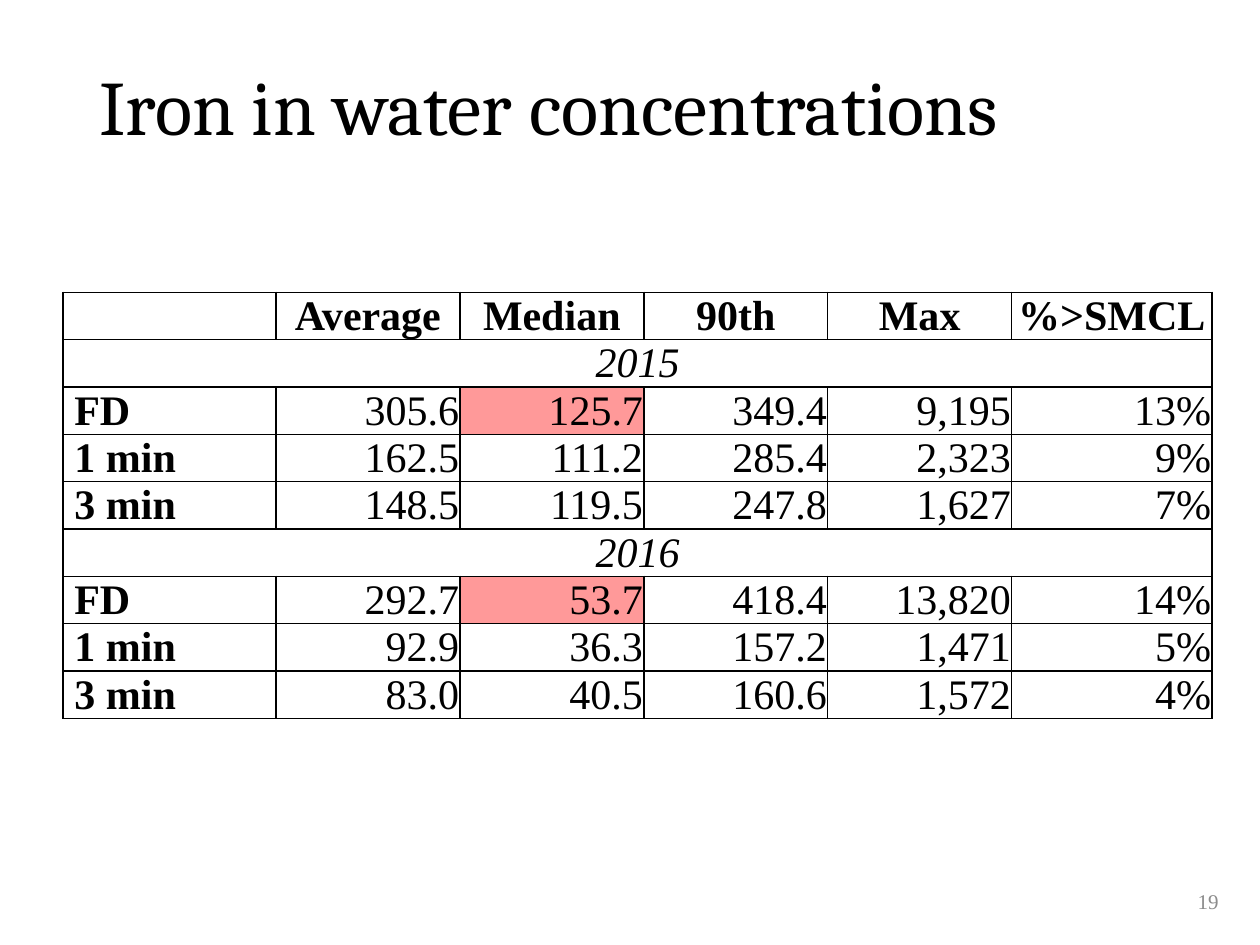
from dataclasses import dataclass

from lxml import etree
from pptx import Presentation
from pptx.dml.color import RGBColor
from pptx.enum.text import MSO_ANCHOR, PP_ALIGN
from pptx.oxml.ns import qn
from pptx.util import Inches, Pt

LEFT, CENTER, RIGHT = PP_ALIGN.LEFT, PP_ALIGN.CENTER, PP_ALIGN.RIGHT
MIDDLE, BOTTOM = MSO_ANCHOR.MIDDLE, MSO_ANCHOR.BOTTOM


@dataclass(frozen=True)
class Theme:
    ink: str = "000000"
    muted: str = "8C8C8C"
    highlight: str = "FF0000"
    highlight_alpha: int = 40
    title_font: str = "Cambria"
    body_font: str = "Times New Roman"
    title_size: int = 44
    table_size: int = 24
    table_line: int = 26
    number_size: int = 12
    border: int = 1


THEME = Theme()

HEADINGS = ["", "Average", "Median", "90th", "Max", "%>SMCL"]
YEARS = {
    "2015": [
        ["FD", "305.6", "125.7", "349.4", "9,195", "13%"],
        ["1 min", "162.5", "111.2", "285.4", "2,323", "9%"],
        ["3 min", "148.5", "119.5", "247.8", "1,627", "7%"],
    ],
    "2016": [
        ["FD", "292.7", "53.7", "418.4", "13,820", "14%"],
        ["1 min", "92.9", "36.3", "157.2", "1,471", "5%"],
        ["3 min", "83.0", "40.5", "160.6", "1,572", "4%"],
    ],
}
COLUMN_WIDTHS = [1.69] + [1.46] * 4 + [1.59]
ROW_HEIGHT = Pt(27.07)
CELL_MARGIN = Pt(0.5)
LABEL_INDENT = Pt(6.5)
MEDIAN = HEADINGS.index("Median")


def write_text(frame, text, *, size, font=THEME.body_font, color=THEME.ink,
               align=LEFT, bold=False, italic=False, line_spacing=None):
    para = frame.paragraphs[0]
    para.alignment = align
    para.line_spacing = line_spacing
    if text:
        span = para.add_run()
        span.text = text
        span.font.name = font
        span.font.size = Pt(size)
        span.font.bold = bold
        span.font.italic = italic
        span.font.color.rgb = RGBColor.from_string(color)


def add_text_box(page, box, text, **text_format):
    frame = page.shapes.add_textbox(*map(Inches, box)).text_frame
    frame.word_wrap = True
    frame.vertical_anchor = MIDDLE
    write_text(frame, text, **text_format)


def add_title(page, box):
    add_text_box(page, box, "Iron in water concentrations", size=THEME.title_size,
                 font=THEME.title_font, line_spacing=0.9)


def add_page_number(page, box):
    add_text_box(page, box, "19", size=THEME.number_size, color=THEME.muted, align=RIGHT)


def set_borders(cell):
    properties = cell._tc.get_or_add_tcPr()
    for side in ("a:lnL", "a:lnR", "a:lnT", "a:lnB"):
        line = etree.SubElement(properties, qn(side), w=str(Pt(THEME.border)))
        fill = etree.SubElement(line, qn("a:solidFill"))
        etree.SubElement(fill, qn("a:srgbClr"), val=THEME.ink)


def set_fill(cell, highlighted):
    if not highlighted:
        cell.fill.background()
        return
    cell.fill.solid()
    cell.fill.fore_color.rgb = RGBColor.from_string(THEME.highlight)
    color = cell._tc.tcPr.find(f"{qn('a:solidFill')}/{qn('a:srgbClr')}")
    etree.SubElement(color, qn("a:alpha"), val=str(THEME.highlight_alpha * 1000))


def format_cell(cell, text="", *, anchor=BOTTOM, indent=CELL_MARGIN, highlighted=False,
                **text_format):
    cell.margin_left = indent
    cell.margin_right = cell.margin_top = CELL_MARGIN
    cell.margin_bottom = 0
    cell.vertical_anchor = anchor
    set_borders(cell)
    set_fill(cell, highlighted)
    write_text(cell.text_frame, text, size=THEME.table_size,
               line_spacing=Pt(THEME.table_line), **text_format)


def add_year_row(cells, year):
    cells[0].merge(cells[-1])
    for cell, text in zip(cells, [year] + [""] * (len(cells) - 1)):
        format_cell(cell, text, align=CENTER, italic=True)


def add_sample_row(cells, values):
    format_cell(cells[0], values[0], bold=True, indent=LABEL_INDENT)
    for column in range(1, len(values)):
        format_cell(cells[column], values[column], align=RIGHT,
                    highlighted=values[0] == "FD" and column == MEDIAN)


def add_iron_table(page, left, top):
    row_count = 1 + sum(1 + len(samples) for samples in YEARS.values())
    table = page.shapes.add_table(
        row_count, len(HEADINGS), Inches(left), Inches(top),
        Inches(sum(COLUMN_WIDTHS)), ROW_HEIGHT * row_count).table
    table.first_row = table.horz_banding = False
    for column, width in zip(table.columns, COLUMN_WIDTHS):
        column.width = Inches(width)

    rows = (list(row.cells) for row in table.rows)
    for cell, heading in zip(next(rows), HEADINGS):
        format_cell(cell, heading, anchor=MIDDLE, align=CENTER, bold=True)
    for year, samples in YEARS.items():
        add_year_row(next(rows), year)
        for values in samples:
            add_sample_row(next(rows), values)


def main():
    deck = Presentation()
    deck.slide_width, deck.slide_height = Inches(10), Inches(7.5)
    page = deck.slides.add_slide(deck.slide_layouts[6])
    add_title(page, (0.69, 0.4, 8.62, 0.95))
    add_page_number(page, (7.06, 6.95, 2.71, 0.4))
    add_iron_table(page, 0.5, 2.32)
    deck.save("out.pptx")


if __name__ == "__main__":
    main()
